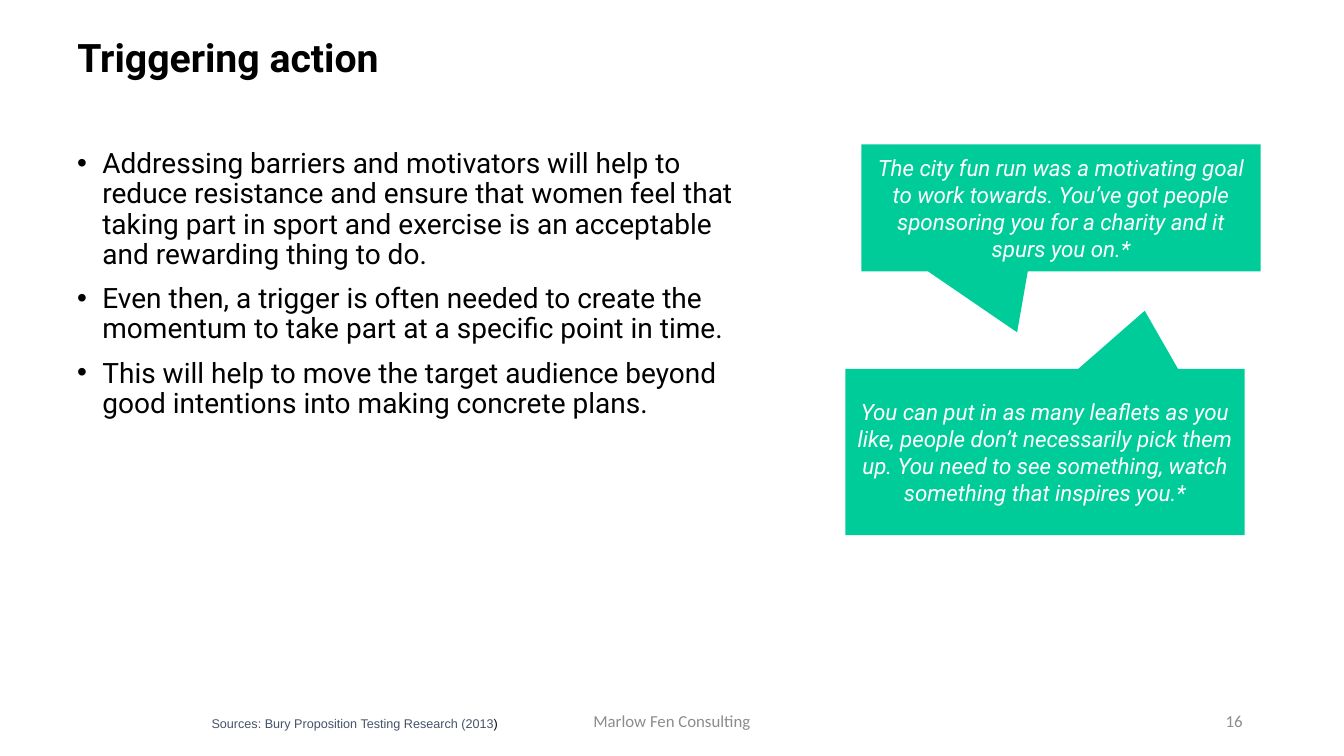
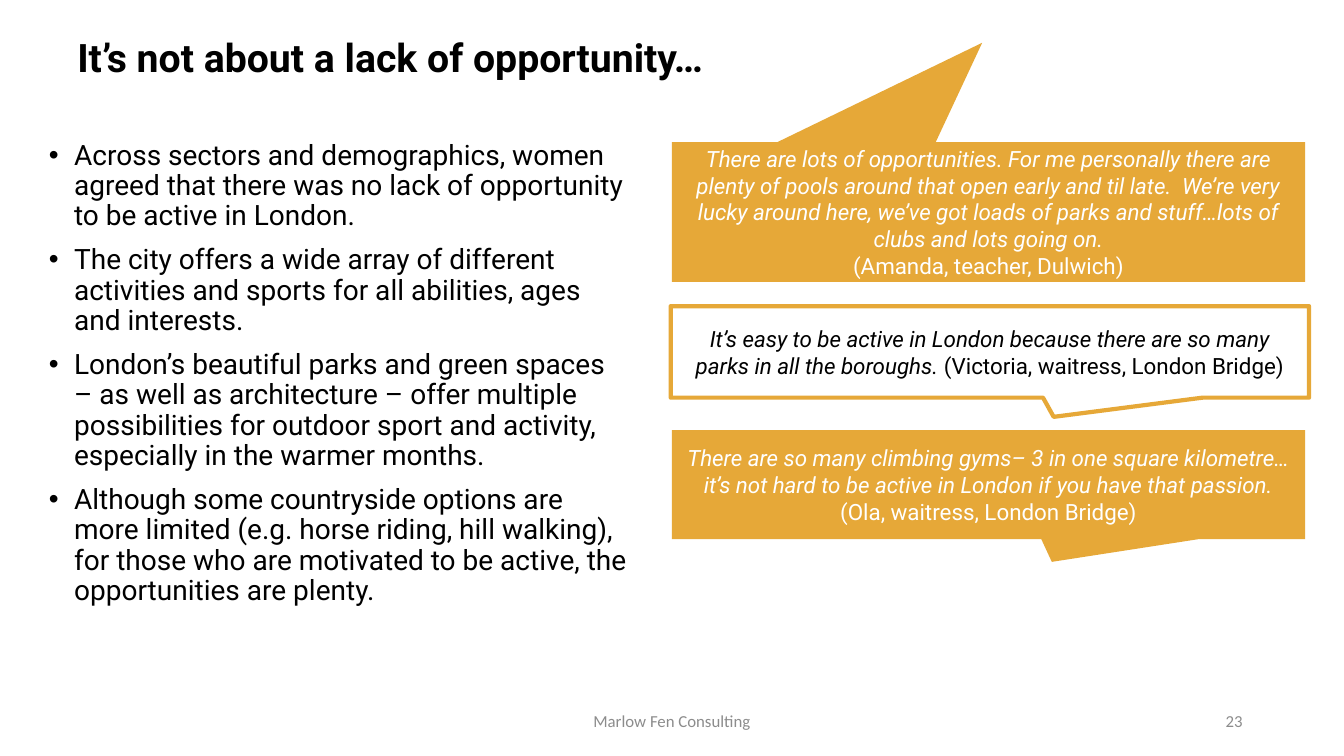
from lxml import etree
from pptx import Presentation
from pptx import util as u
from pptx.dml.color import RGBColor
from pptx.enum import shapes, text
from pptx.oxml import ns

WIDTH, HEIGHT = u.Inches(13.33), u.Inches(7.5)
BLACK = RGBColor(0x00, 0x00, 0x00)
WHITE = RGBColor(0xFF, 0xFF, 0xFF)
GREY = RGBColor(0x8C, 0x8C, 0x8C)
SLATE = RGBColor(0x44, 0x54, 0x6A)
GREEN = RGBColor(0x00, 0xCC, 0x99)
GOLD = RGBColor(0xE6, 0xA8, 0x38)
LEFT, CENTER, RIGHT = text.PP_ALIGN.LEFT, text.PP_ALIGN.CENTER, text.PP_ALIGN.RIGHT
TOP, MIDDLE = text.MSO_ANCHOR.TOP, text.MSO_ANCHOR.MIDDLE
FOOTER = "Marlow Fen Consulting"


def area(left, top, width, height):
    """Turn percentages of the slide into lengths."""
    return [u.Emu(round(share * side / 100)) for share, side in
            zip((left, top, width, height), (WIDTH, HEIGHT) * 2)]


def add_bullet(paragraph):
    properties = paragraph._p.get_or_add_pPr()
    indent = u.Inches(0.25)
    properties.set("marL", str(indent))
    properties.set("indent", str(-indent))
    etree.SubElement(properties, ns.qn("a:buFont"), typeface="Arial")
    etree.SubElement(properties, ns.qn("a:buChar"), char="•")


def write(frame, paragraphs, size=16, font="Roboto", color=BLACK, bold=False,
          italic=False, align=LEFT, anchor=MIDDLE, spacing=1.0, before=0,
          bullet=False, wrap=True):
    """Each paragraph is a string or a list of (text, changed format) spans."""
    frame.word_wrap = wrap
    frame.auto_size = text.MSO_AUTO_SIZE.NONE
    frame.vertical_anchor = anchor
    for index, content in enumerate(paragraphs):
        paragraph = frame.add_paragraph() if index else frame.paragraphs[0]
        if bullet:
            add_bullet(paragraph)
        paragraph.alignment = align
        paragraph.line_spacing = spacing
        paragraph.space_before = u.Pt(before if index else 0)
        spans = [(content, {})] if isinstance(content, str) else content
        for words, changes in spans:
            span = paragraph.add_run()
            span.text = words
            span.font.name = font
            span.font.size = u.Pt(size)
            span.font.bold = bold
            span.font.italic = changes.get("italic", italic)
            span.font.color.rgb = changes.get("color", color)


def add_text(page, place, paragraphs, **style):
    box = page.shapes.add_textbox(*area(*place))
    write(box.text_frame, paragraphs, **style)
    return box


def add_bullets(page, place, paragraphs):
    add_text(page, place, paragraphs, size=20, anchor=TOP, spacing=0.9,
             before=10, bullet=True)


def add_quote(page, place, tip, paragraphs, color, outlined=False):
    box = page.shapes.add_shape(shapes.MSO_SHAPE.RECTANGULAR_CALLOUT, *area(*place))
    box.shadow.inherit = False
    for index, share in enumerate(tip):
        box.adjustments[index] = share
    if outlined:
        box.fill.background()
        box.line.color.rgb = color
        box.line.width = u.Pt(3)
    else:
        box.fill.solid()
        box.fill.fore_color.rgb = color
        box.line.fill.background()
    write(box.text_frame, paragraphs, italic=True, align=CENTER,
          color=BLACK if outlined else WHITE)


def add_page(deck, title, number):
    page = deck.slides.add_slide(deck.slide_layouts.get_by_name("Title Only"))
    heading = page.shapes.title
    heading.left, heading.top, heading.width, heading.height = area(5, -0.4, 90, 16.7)
    write(heading.text_frame, [title], size=28, bold=True, spacing=0.9)
    small = dict(size=12, font="Calibri", color=GREY)
    add_text(page, (33.1, 92.7, 33.8, 5.3), [FOOTER], align=CENTER, **small)
    add_text(page, (70.7, 92.7, 22.5, 5.3), [str(number)], align=RIGHT, **small)
    return page


def add_triggers(deck):
    page = add_page(deck, "Triggering action", 16)
    add_bullets(page, (5, 19.1, 51.3, 74.9), [
        "Addressing barriers and motivators will help to reduce resistance and ensure "
        "that women feel that taking part in sport and exercise is an acceptable and "
        "rewarding thing to do.",
        "Even then, a trigger is often needed to create the momentum to take part at "
        "a specific point in time.",
        "This will help to move the target audience beyond good intentions into "
        "making concrete plans.",
    ])
    source = add_text(page, (15, 94.1, 23.4, 3.3), [[
        ("Sources: Bury Proposition Testing Research (2013", {}),
        (")", {"color": BLACK}),
    ]], size=9, font="Arial", color=SLATE, anchor=TOP, wrap=False)
    source.fill.solid()
    source.fill.fore_color.rgb = WHITE
    add_quote(page, (64.1, 19.1, 29.7, 16.8), (-0.11, 0.98), [
        "The city fun run was a motivating goal to work towards. You’ve got people "
        "sponsoring you for a charity and it spurs you on.*"], GREEN)
    add_quote(page, (62.9, 48.8, 29.7, 22), (0.25, -0.85), [
        "You can put in as many leaflets as you like, people don’t necessarily pick "
        "them up. You need to see something, watch something that inspires you.*"], GREEN)


def add_opportunities(deck):
    page = add_page(deck, "It’s not about a lack of opportunity…", 23)
    add_bullets(page, (2.9, 18, 44.7, 72.3), [
        "Across sectors and demographics, women agreed that there was no lack of "
        "opportunity to be active in London.",
        "The city offers a wide array of different activities and sports for all "
        "abilities, ages and interests.",
        "London’s beautiful parks and green spaces – as well as architecture – offer "
        "multiple possibilities for outdoor sport and activity, especially in the "
        "warmer months.",
        "Although some countryside options are more limited (e.g. horse riding, hill "
        "walking), for those who are motivated to be active, the opportunities are "
        "plenty.",
    ])
    upright = {"italic": False}
    low_tip = (0.1, 0.71)
    add_quote(page, (49.9, 40.5, 47.5, 12.1), low_tip, [[
        ("It’s easy to be active in London because there are so many parks in all the "
         "boroughs. ", {}),
        ("(Victoria, waitress, London Bridge)", upright),
    ]], GOLD, outlined=True)
    add_quote(page, (50, 18.8, 47.1, 18.5), (-0.01, -1.21), [
        "There are lots of opportunities. For me personally there are plenty of pools "
        "around that open early and til late.  We’re very lucky around here, we’ve got "
        "loads of parks and stuff…lots of clubs and lots going on.",
        [("(Amanda, teacher, Dulwich)", upright)],
    ], GOLD)
    add_quote(page, (50, 56.9, 47.1, 14.4), low_tip, [[
        ("There are so many climbing gyms– 3 in one square kilometre…it’s not hard to "
         "be active in London if you have that passion. ", {}),
        ("(Ola, waitress, London Bridge)", upright),
    ]], GOLD)


def main():
    deck = Presentation()
    deck.slide_width, deck.slide_height = WIDTH, HEIGHT
    add_triggers(deck)
    add_opportunities(deck)
    deck.save("out.pptx")


if __name__ == "__main__":
    main()
